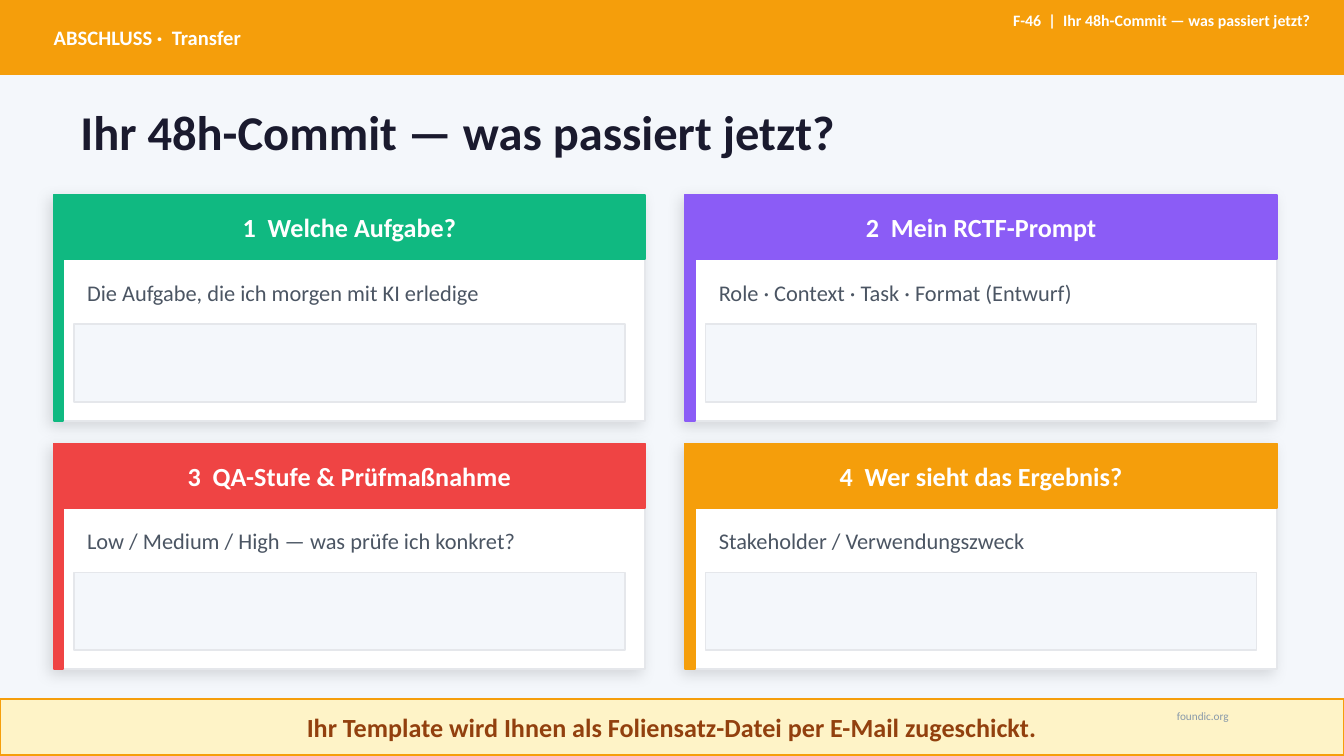
from lxml import etree
from pptx import Presentation
from pptx.dml.color import RGBColor
from pptx.enum.shapes import MSO_SHAPE
from pptx.enum.text import MSO_ANCHOR as Anchor, PP_ALIGN as Align
from pptx.oxml.ns import qn
from pptx.util import Inches, Pt

FONT = "Calibri"
WHITE, PALE, BORDER = "FFFFFF", "F4F7FB", "E5E7EB"
AMBER, GREEN, VIOLET, RED = "F59E0B", "10B981", "8B5CF6", "EF4444"

SLIDE_W = 10
SLIDE_H = SLIDE_W * 9 / 16
CARD_W, CARD_H = 4.4, 1.68
GRID_LEFT, GRID_TOP = 0.4, 1.45
COL_STEP, ROW_STEP = 4.7, 1.85

CARDS = [
    ("1  Welche Aufgabe?", "Die Aufgabe, die ich morgen mit KI erledige", GREEN),
    ("2  Mein RCTF-Prompt", "Role · Context · Task · Format (Entwurf)", VIOLET),
    ("3  QA-Stufe & Prüfmaßnahme", "Low / Medium / High — was prüfe ich konkret?", RED),
    ("4  Wer sieht das Ergebnis?", "Stakeholder / Verwendungszweck", AMBER),
]


def rgb(value):
    return RGBColor.from_string(value)


def add_panel(slide, left, top, width, height, fill, border):
    panel = slide.shapes.add_shape(
        MSO_SHAPE.RECTANGLE, Inches(left), Inches(top), Inches(width), Inches(height))
    panel.shadow.inherit = False
    panel.fill.solid()
    panel.fill.fore_color.rgb = rgb(fill)
    panel.line.color.rgb = rgb(border)
    panel.line.width = Pt(1)
    return panel


def add_soft_shadow(panel):
    """Cast a faint black shadow to the lower left."""
    effects = panel._element.spPr.find(qn("a:effectLst"))
    shadow = etree.SubElement(
        effects, qn("a:outerShdw"), blurRad=str(Pt(8)), dist=str(Pt(3)),
        dir=str(135 * 60000), algn="bl", rotWithShape="0")
    black = etree.SubElement(shadow, qn("a:srgbClr"), val="000000")
    etree.SubElement(black, qn("a:alpha"), val="12000")


def add_label(slide, left, top, width, height, text, size, color, bold=False,
              align=Align.LEFT, anchor=Anchor.MIDDLE, wrap=True):
    label = slide.shapes.add_textbox(
        Inches(left), Inches(top), Inches(width), Inches(height))
    frame = label.text_frame
    frame.word_wrap = wrap
    frame.vertical_anchor = anchor
    paragraph = frame.paragraphs[0]
    paragraph.alignment = align
    run = paragraph.add_run()
    run.text = text
    run.font.name = FONT
    run.font.size = Pt(size)
    run.font.bold = bold
    run.font.color.rgb = rgb(color)
    return frame


def add_header(slide, left, top, width, height):
    add_panel(slide, left, top, width, height, AMBER, AMBER)
    section = add_label(slide, left + 0.4, top, width - 0.8, height,
                        "ABSCHLUSS ·  Transfer", 11, WHITE, bold=True)
    section.margin_left = section.margin_right = 0
    section.margin_top = section.margin_bottom = 0


def add_slide_reference(slide, left, top, width, height):
    add_label(slide, left, top, width, height,
              "F-46  |  Ihr 48h-Commit — was passiert jetzt?", 8.5, WHITE,
              bold=True, align=Align.RIGHT, anchor=Anchor.TOP, wrap=False)


def add_card(slide, left, top, width, height, heading, prompt, accent):
    """Draw one commit card: heading bar, prompt and an empty answer field."""
    inset, bar_h = 0.15, 0.48
    inner_w = width - 2 * inset
    add_soft_shadow(add_panel(slide, left, top, width, height, WHITE, BORDER))
    add_panel(slide, left, top, 0.07, height, accent, accent)
    add_panel(slide, left, top, width, bar_h, accent, accent)
    add_label(slide, left, top, width, bar_h, heading, 14, WHITE,
              bold=True, align=Align.CENTER)
    add_label(slide, left + inset, top + 0.55, inner_w, 0.35, prompt, 12, "4B5563")
    add_panel(slide, left + inset, top + 0.96, inner_w, 0.58, PALE, BORDER)


def add_footer(slide, left, top, width, height):
    add_panel(slide, left, top, width, height, "FEF3C7", AMBER)
    add_label(slide, left + 0.5, top, width - 1, height,
              "Ihr Template wird Ihnen als Foliensatz-Datei per E-Mail zugeschickt.",
              14, "92400E", bold=True, align=Align.CENTER)


def main():
    deck = Presentation()
    deck.slide_width, deck.slide_height = Inches(SLIDE_W), Inches(SLIDE_H)
    slide = deck.slides.add_slide(deck.slide_layouts[6])
    slide.background.fill.solid()
    slide.background.fill.fore_color.rgb = rgb(PALE)

    add_header(slide, 0, 0, SLIDE_W, 0.55)
    add_label(slide, 0.5, 0.65, 9, 0.65, "Ihr 48h-Commit — was passiert jetzt?",
              26, "1A1A2E", bold=True)
    for index, (heading, prompt, accent) in enumerate(CARDS):
        row, col = divmod(index, 2)
        add_card(slide, GRID_LEFT + col * COL_STEP, GRID_TOP + row * ROW_STEP,
                 CARD_W, CARD_H, heading, prompt, accent)
    add_footer(slide, 0, 5.2, SLIDE_W, 0.42)
    add_slide_reference(slide, 5.05, 0.03, 4.8, 0.48)
    add_label(slide, 8.09, 5.17, 1.15, 0.31, "foundic.org", 6, "8899AA",
              align=Align.RIGHT)
    deck.save("out.pptx")


if __name__ == "__main__":
    main()
